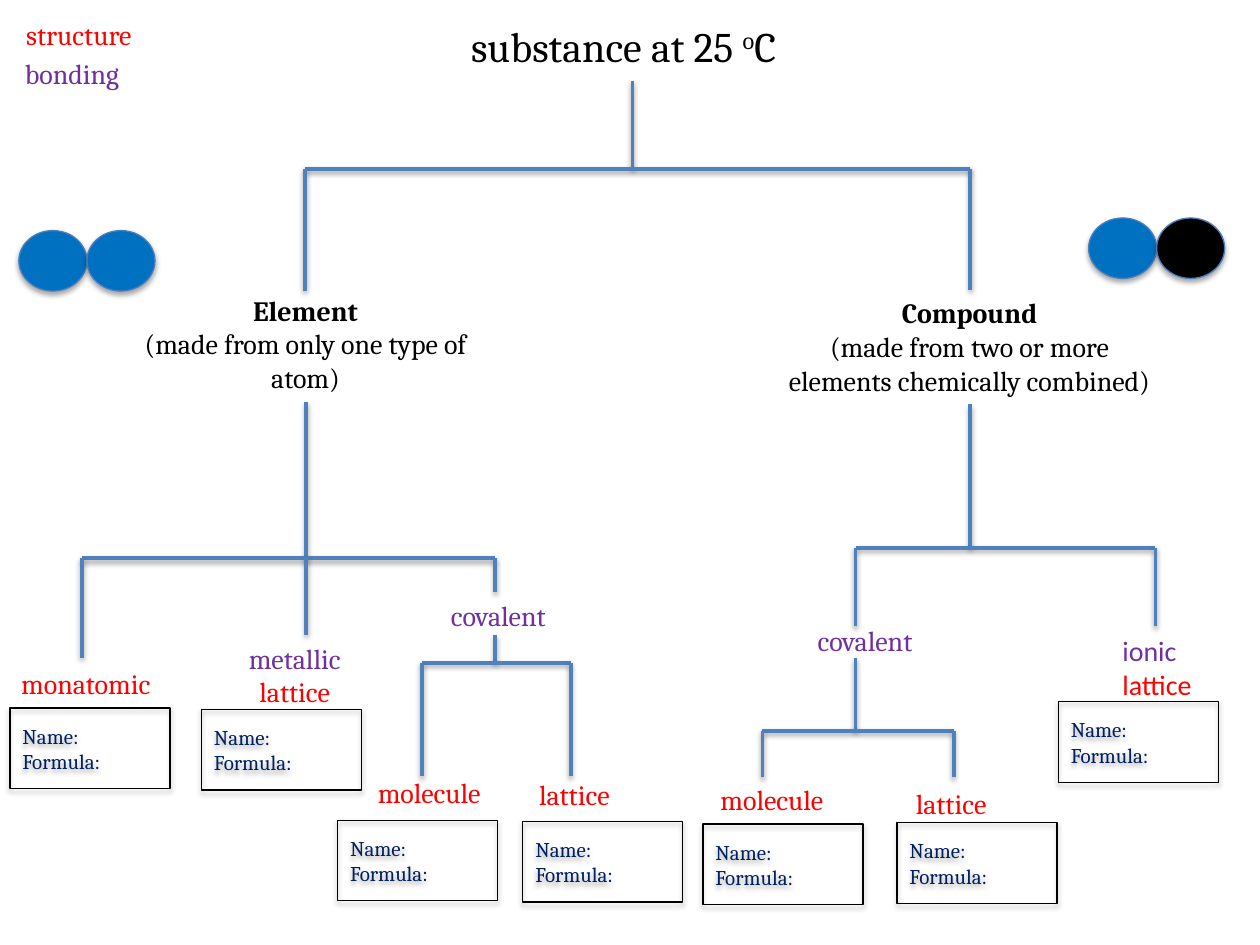
from lxml.etree import SubElement
from pptx import Presentation
from pptx.dml.color import RGBColor
from pptx.enum.shapes import MSO_CONNECTOR, MSO_SHAPE
from pptx.enum.text import MSO_ANCHOR, MSO_AUTO_SIZE, PP_ALIGN
from pptx.oxml.ns import qn
from pptx.util import Inches, Pt

BLACK, RED, PURPLE, NAVY = "000000", "FF0000", "7030A0", "002060"
BRANCH, ATOM_BLUE, ATOM_EDGE = "4F81BD", "0070C0", "4B7EBC"
LEFT, CENTER = PP_ALIGN.LEFT, PP_ALIGN.CENTER

BODY = {"size": Pt(16), "name": "Cambria"}
BOLD = {**BODY, "bold": True}
CALIBRI = {**BODY, "name": "Calibri"}
TITLE = {**BODY, "size": Pt(24)}
ANSWER = {**BODY, "size": Pt(12)}

# stem x, stem top, bar y, then (x, bottom) of every drop
BRACKETS = [
    (5.02, 0.64, 1.34, [(2.42, 2.31), (7.7, 2.3)]),
    (2.43, 3.19, 4.43, [(0.65, 5.22), (2.43, 5.04), (3.93, 4.7)]),
    (3.93, 5.04, 5.26, [(3.35, 6.16), (4.53, 6.16)]),
    (7.7, 3.21, 4.35, [(6.79, 4.97), (9.17, 4.97)]),
    (6.79, 5.22, 5.8, [(6.05, 6.17), (7.57, 6.17)]),
]

# left, top, width, alignment, lines of (text, colour, format)
LABELS = [
    (0.11, 0.09, 2, LEFT, [("structure", RED, BODY)]),
    (0.1, 0.4, 2, LEFT, [("bonding", PURPLE, BODY)]),
    (0.8, 2.28, 3.25, CENTER, [("Element", BLACK, BOLD),
                               ("(made from only one type of atom)", BLACK, BODY)]),
    (6.07, 2.3, 3.25, CENTER, [("Compound", BLACK, BOLD),
                               ("(made from two or more elements chemically combined)",
                                BLACK, BODY)]),
    (0.07, 5.24, 1.3, LEFT, [("monatomic", RED, BODY)]),
    (1.81, 5.04, 1.06, CENTER, [("metallic", PURPLE, BODY), ("lattice", RED, BODY)]),
    (3.48, 4.7, 2, LEFT, [("covalent", PURPLE, BODY)]),
    (2.9, 6.11, 1.64, LEFT, [("molecule", RED, BODY)]),
    (4.18, 6.12, 1, LEFT, [("lattice", RED, BODY)]),
    (6.39, 4.9, 2, LEFT, [("covalent", PURPLE, BODY)]),
    (5.62, 6.16, 1.5, LEFT, [("molecule", RED, BODY)]),
    (7.17, 6.19, 1.2, LEFT, [("lattice", RED, BODY)]),
    (8.81, 4.98, 1.15, LEFT, [("ionic", PURPLE, CALIBRI), ("lattice", RED, CALIBRI)]),
]

ANSWER_SIZE = (1.27, 0.64)
ANSWER_SPOTS = [(0.08, 5.62), (1.6, 5.63), (2.68, 6.51), (4.15, 6.52),
                (5.58, 6.54), (7.12, 6.53), (8.4, 5.57)]
ANSWER_LINES = [("Name:", NAVY, ANSWER), ("Formula:", NAVY, ANSWER)]

ATOM_SIZE = (0.54, 0.48)
MOLECULES = [(0.15, 1.83, [ATOM_BLUE, ATOM_BLUE]), (8.64, 1.73, [ATOM_BLUE, BLACK])]


def color(value):
    return RGBColor.from_string(value)


def add_shadow(shape, opacity, distance):
    """Cast a soft black shadow straight down; call after fill and line are set."""
    effects = SubElement(shape._element.spPr, qn("a:effectLst"))
    outer = SubElement(effects, qn("a:outerShdw"), blurRad=str(Pt(3.1)),
                       dist=str(Pt(distance)), dir="5400000", rotWithShape="0")
    black = SubElement(outer, qn("a:srgbClr"), val=BLACK)
    SubElement(black, qn("a:alpha"), val=str(opacity * 1000))


def add_run(paragraph, text, text_color, style):
    run = paragraph.add_run()
    run.text = text
    run.font.color.rgb = color(text_color)
    for attribute, value in style.items():
        setattr(run.font, attribute, value)
    return run


def write_lines(frame, lines, alignment):
    frame.word_wrap = True
    for index, line in enumerate(lines):
        paragraph = frame.paragraphs[0] if index == 0 else frame.add_paragraph()
        paragraph.alignment = alignment
        add_run(paragraph, *line)


def add_label(shapes, left, top, width, alignment, lines):
    height = 0.1 + 0.27 * len(lines)
    label = shapes.add_textbox(*map(Inches, (left, top, width, height)))
    label.text_frame.auto_size = MSO_AUTO_SIZE.SHAPE_TO_FIT_TEXT
    write_lines(label.text_frame, lines, alignment)
    return label


def add_branch(shapes, *ends):
    branch = shapes.add_connector(MSO_CONNECTOR.STRAIGHT, *map(Inches, ends))
    branch.line.color.rgb = color(BRANCH)
    branch.line.width = Pt(2)
    add_shadow(branch, 38, 1.6)


def add_bracket(shapes, stem, top, bar, drops):
    columns = [x for x, _ in drops]
    add_branch(shapes, stem, top, stem, bar)
    add_branch(shapes, min(columns), bar, max(columns), bar)
    for x, bottom in drops:
        add_branch(shapes, x, bar, x, bottom)


def add_outlined(shapes, kind, spot, size, edge, fill=None):
    shape = shapes.add_shape(kind, *map(Inches, (*spot, *size)))
    if fill:
        shape.fill.solid()
        shape.fill.fore_color.rgb = color(fill)
    else:
        shape.fill.background()
    shape.line.color.rgb = color(edge)
    shape.line.width = Pt(0.75)
    add_shadow(shape, 35, 1.8)
    return shape


def main():
    deck = Presentation()
    deck.slide_width, deck.slide_height = Inches(10), Inches(7.5)
    shapes = deck.slides.add_slide(deck.slide_layouts[6]).shapes

    title = add_label(shapes, 3.64, 0.11, 3.15, LEFT,
                      [("substance at 25 ", BLACK, TITLE)])
    heading = title.text_frame.paragraphs[0]
    degree = add_run(heading, "o", BLACK, TITLE)
    degree.font._element.set("baseline", "30000")
    add_run(heading, "C", BLACK, TITLE)

    for bracket in BRACKETS:
        add_bracket(shapes, *bracket)
    for left, top, fills in MOLECULES:
        for index, fill in enumerate(fills):
            spot = (left + index * ATOM_SIZE[0], top)
            add_outlined(shapes, MSO_SHAPE.OVAL, spot, ATOM_SIZE, ATOM_EDGE, fill)
    for label in LABELS:
        add_label(shapes, *label)
    for spot in ANSWER_SPOTS:
        answer = add_outlined(shapes, MSO_SHAPE.RECTANGLE, spot, ANSWER_SIZE, BLACK)
        answer.text_frame.vertical_anchor = MSO_ANCHOR.MIDDLE
        write_lines(answer.text_frame, ANSWER_LINES, LEFT)

    deck.save("out.pptx")


if __name__ == "__main__":
    main()
